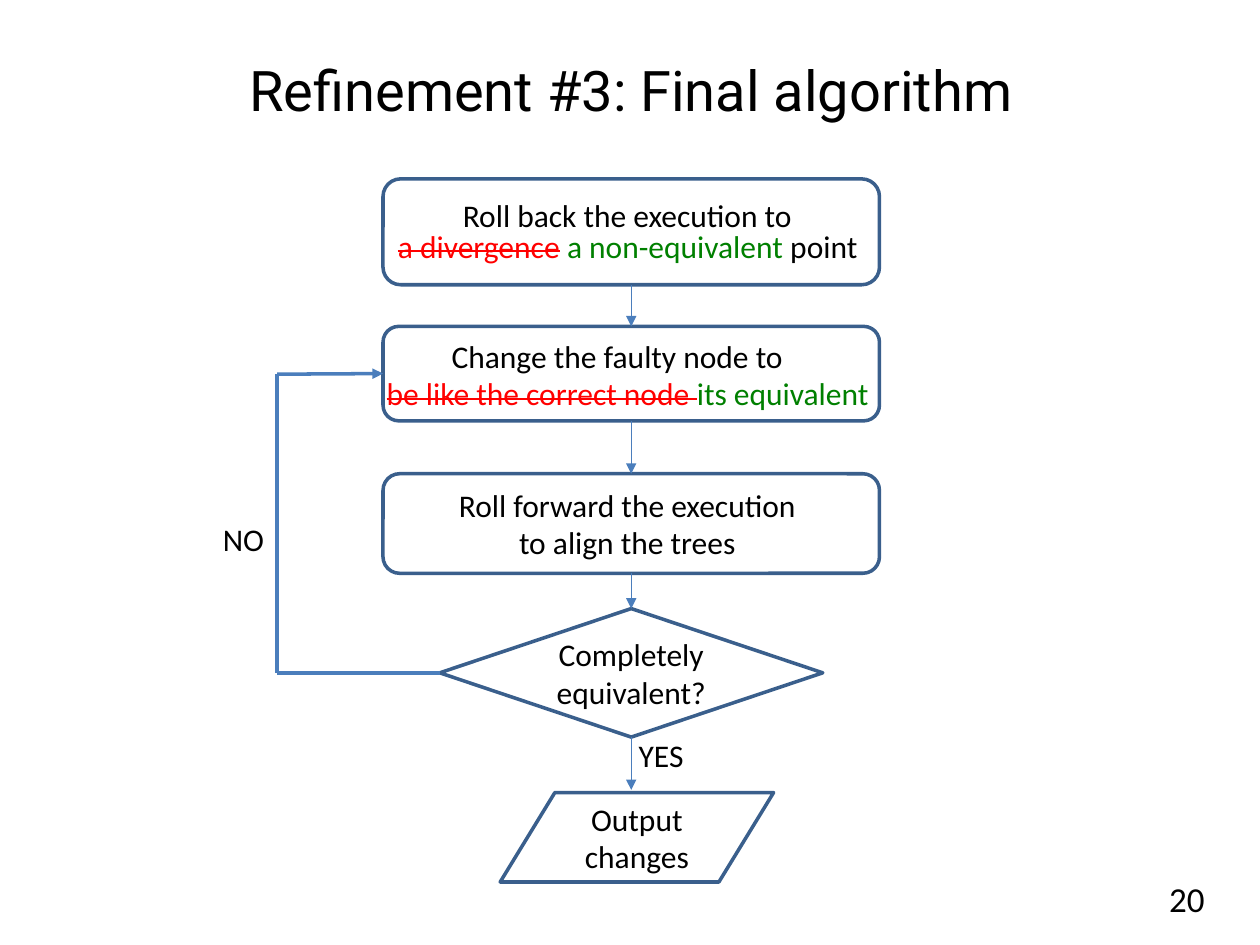
from lxml import etree
from pptx import Presentation
from pptx import util as u
from pptx.dml.color import RGBColor
from pptx.enum import shapes, text
from pptx.oxml.ns import qn

PX = 9144  # 100 px to the inch
BLACK, RED, GREEN = "000000", "FF0000", "008000"
OUTLINE, ARROW = "3A5F8C", "4B7EBC"
TOP, LEFT, BOTTOM = 0, 1, 2


def color(hex_string):
    return RGBColor.from_string(hex_string)


def style(paragraph, align, size=18, face="Calibri"):
    """Align a paragraph and give all its runs one black font."""
    paragraph.alignment = align
    for run in paragraph.runs:
        run.font.size = u.Pt(size)
        run.font.name = face
        run.font.color.rgb = color(BLACK)


prs = Presentation()
prs.slide_width, prs.slide_height = 1000 * PX, 750 * PX
slide = prs.slides.add_slide(prs.slide_layouts[5])
align = text.PP_ALIGN

title = slide.shapes.title
title.left, title.top, title.width, title.height = [v * PX for v in (75, 17, 852, 108)]
title.text_frame.text = "Refinement #3: Final algorithm"
title.text_frame.vertical_anchor = text.MSO_ANCHOR.MIDDLE
style(title.text_frame.paragraphs[0], align.CENTER, 32, "Roboto")

# Flowchart steps: preset, place, lines, extra right and bottom inset.
# The bottom inset keeps room for the revised wording under the first line.
process = shapes.MSO_SHAPE.FLOWCHART_ALTERNATE_PROCESS
decision = shapes.MSO_SHAPE.FLOWCHART_DECISION
output = shapes.MSO_SHAPE.FLOWCHART_DATA
step_specs = [
    (process, (304, 142, 394, 84), "Roll back the execution to", 6, 26),
    (process, (304, 259, 394, 75), "Change the faulty node to", 22, 28),
    (process, (304, 376, 394, 79), "Roll forward the execution\nto align the trees", 6, 0),
    (decision, (349, 483, 304, 102), "Completely equivalent?", 0, 0),
    (output, (397, 629, 217, 71), "Output changes", 0, 0),
]
steps = []
for preset, place, wording, extra_right, extra_bottom in step_specs:
    step = slide.shapes.add_shape(preset, *[v * PX for v in place])
    step.shadow.inherit = False
    step.fill.background()
    step.line.color.rgb = color(OUTLINE)
    step.line.width = u.Pt(2)
    frame = step.text_frame
    frame.word_wrap = True
    frame.vertical_anchor = text.MSO_ANCHOR.MIDDLE
    frame.margin_right = (10 + extra_right) * PX
    frame.margin_bottom = (5 + extra_bottom) * PX
    frame.text = wording
    for paragraph in frame.paragraphs:
        style(paragraph, align.CENTER)
    steps.append(step)
roll_back, change_node, roll_forward, equivalent, changes = steps

# Links: start, end, width, arrowhead, joined start and end as (step, side)
links = [
    ((501, 226), (501, 259), 0.75, True, (roll_back, BOTTOM), (change_node, TOP)),
    ((501, 334), (501, 376), 0.75, True, (change_node, BOTTOM), (roll_forward, TOP)),
    ((501, 455), (501, 483), 0.75, True, (roll_forward, BOTTOM), (equivalent, TOP)),
    ((501, 585), (501, 627), 0.75, True, (equivalent, BOTTOM), None),
    ((349, 534), (220, 534), 2, False, (equivalent, LEFT), None),
    ((220, 534), (220, 297), 2, False, None, None),
    ((220, 297), (304, 297), 2, True, None, (change_node, LEFT)),
]
for start, end, width, has_arrow, joined_start, joined_end in links:
    link = slide.shapes.add_connector(
        shapes.MSO_CONNECTOR.STRAIGHT, *[v * PX for v in start + end])
    if joined_start:
        link.begin_connect(*joined_start)
    if joined_end:
        link.end_connect(*joined_end)
    link.line.color.rgb = color(ARROW)
    link.line.width = u.Pt(width)
    if has_arrow:
        etree.SubElement(link.line._get_or_add_ln(), qn("a:tailEnd"), type="triangle")
    etree.SubElement(link._element.spPr, qn("a:effectLst"))

# Labels: place, alignment, size, runs of (wording, colour); red is struck out
labels = [
    ((306, 175, 408, 40), align.LEFT, 18,
     [("a divergence", RED), (" ", BLACK), ("a non-equivalent", GREEN), (" point", BLACK)]),
    ((297, 292, 455, 40), align.LEFT, 18,
     [("be like the correct node ", RED), ("its equivalent", GREEN)]),
    ((497, 579, 58, 40), align.LEFT, 18, [("YES", BLACK)]),
    ((167, 408, 89, 40), align.LEFT, 18, [("NO", BLACK)]),
    ((733, 693, 233, 40), align.RIGHT, 20, [("20", BLACK)]),
]
for place, side, size, parts in labels:
    label = slide.shapes.add_textbox(*[v * PX for v in place])
    label.text_frame.word_wrap = True
    label.text_frame.vertical_anchor = text.MSO_ANCHOR.MIDDLE
    paragraph = label.text_frame.paragraphs[0]
    for wording, _ in parts:
        paragraph.add_run().text = wording
    style(paragraph, side, size)
    for run, (_, hex_string) in zip(paragraph.runs, parts):
        run.font.color.rgb = color(hex_string)
        if hex_string == RED:
            run._r.get_or_add_rPr().set("strike", "sngStrike")

prs.save("out.pptx")
